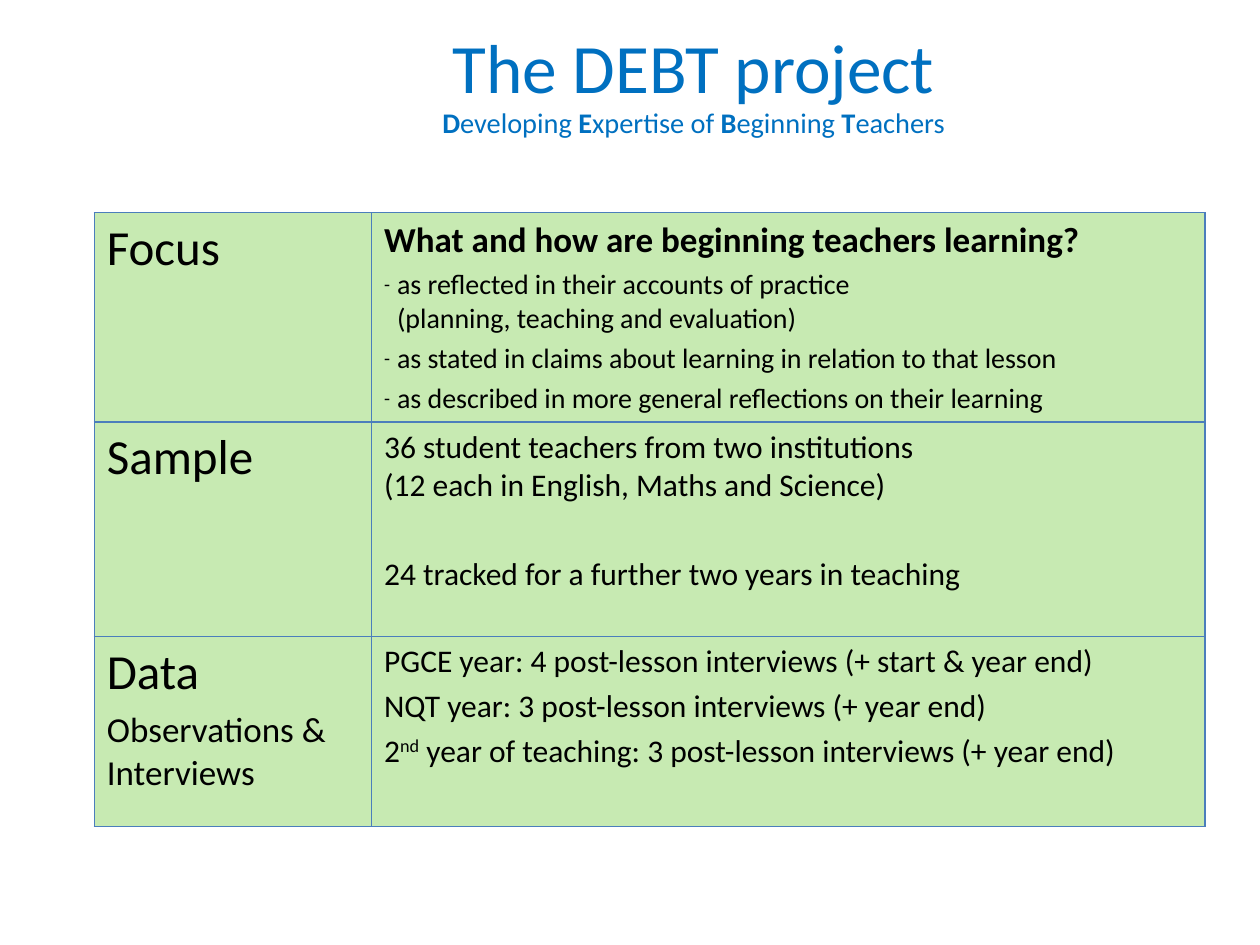
from dataclasses import dataclass

from lxml import etree
from pptx import Presentation, util as u
from pptx.dml.color import RGBColor
from pptx.enum import text
from pptx.oxml import ns

FONT = "Calibri"
BLUE = "0070C0"
BLACK = "000000"
GREEN = "C7EAB2"
BORDER = "4B7EBC"


@dataclass
class Line:
    content: str
    size: float
    bold: bool = False
    bullet: bool = False
    before: float = 0.2


def rgb(value: str) -> RGBColor:
    return RGBColor.from_string(value)


def add_node(parent, tag: str, **attrs):
    return etree.SubElement(parent, ns.qn(tag), attrs)


def set_font(font, size: float, color: str, bold: bool = False) -> None:
    font.name = FONT
    font.size = u.Pt(size)
    font.bold = bold
    font.color.rgb = rgb(color)


def add_dash(p) -> None:
    pPr = p._p.get_or_add_pPr()
    indent = u.Cm(0.26)
    pPr.set("marL", str(indent))
    pPr.set("indent", str(-indent))
    nodes = [etree.Element(ns.qn(tag), {key: value}) for tag, key, value in (
        ("a:buSzPct", "val", "70000"),
        ("a:buFont", "typeface", FONT),
        ("a:buChar", "char", "-"))]
    position = pPr.index(pPr.find(ns.qn("a:defRPr")))
    pPr[position:position] = nodes


def write_line(p, line: Line) -> None:
    p.space_before = u.Pt(round(line.before * line.size, 1))
    set_font(p.font, line.size, BLACK, line.bold)
    for i, row in enumerate(line.content.split("\n")):
        if i:
            p.add_line_break()
        for j, part in enumerate(row.split("^")):
            r = p.add_run()
            r.text = part
            if j % 2:
                r.font._element.set("baseline", "30000")
    if line.bullet:
        add_dash(p)


def draw_borders(cell) -> None:
    tcPr = cell._tc.get_or_add_tcPr()
    for i, side in enumerate(("a:lnL", "a:lnR", "a:lnT", "a:lnB")):
        ln = etree.Element(ns.qn(side), {"w": str(u.Pt(0.75))})
        add_node(add_node(ln, "a:solidFill"), "a:srgbClr", val=BORDER)
        tcPr.insert(i, ln)


def fill_cell(cell, lines: list[Line]) -> None:
    cell.fill.solid()
    cell.fill.fore_color.rgb = rgb(GREEN)
    draw_borders(cell)
    tf = cell.text_frame
    for i, line in enumerate(lines):
        write_line(tf.add_paragraph() if i else tf.paragraphs[0], line)


def draw_title(title) -> None:
    title.left, title.top = u.Cm(4.24), u.Cm(0.53)
    title.width, title.height = u.Cm(19.48), u.Cm(2.44)
    tf = title.text_frame
    tf.auto_size = text.MSO_AUTO_SIZE.NONE
    tf.vertical_anchor = text.MSO_ANCHOR.MIDDLE
    p = tf.paragraphs[0]
    p.alignment = text.PP_ALIGN.CENTER
    p.line_spacing = 0.9
    r = p.add_run()
    r.text = "The DEBT project"
    set_font(r.font, 39.6, BLUE)
    p.add_line_break()
    for word in ("Developing ", "Expertise of ", "Beginning ", "Teachers"):
        for part, bold in ((word[0], True), (word[1:], False)):
            r = p.add_run()
            r.text = part
            set_font(r.font, 16.2, BLUE, bold)


def draw_table(s, rows: list[tuple[list[Line], list[Line]]]) -> None:
    frame = s.shapes.add_table(len(rows), 2, u.Cm(1.9), u.Cm(4.29),
                               u.Cm(22.39), u.Cm(12.36))
    table = frame.table
    table.first_row = table.horz_banding = False
    for column, width in zip(table.columns, (5.59, 16.8)):
        column.width = u.Cm(width)
    for row, height, contents in zip(table.rows, (4.2, 4.32, 3.84), rows):
        row.height = u.Cm(height)
        for cell, lines in zip(row.cells, contents):
            fill_cell(cell, lines)


ROWS = [
    ([Line("Focus", 28)],
     [Line("What and how are beginning teachers learning?", 20, bold=True),
      Line("as reflected in their accounts of practice\n"
           "(planning, teaching and evaluation)", 16, bullet=True),
      Line("as stated in claims about learning in relation to that lesson",
           16, bullet=True),
      Line("as described in more general reflections on their learning",
           16, bullet=True)]),
    ([Line("Sample", 28)],
     [Line("36 student teachers from two institutions\n"
           "(12 each in English, Maths and Science)", 18),
      Line("24 tracked for a further two years in teaching", 18, before=1.6)]),
    ([Line("Data", 28), Line("Observations & Interviews", 20)],
     [Line("PGCE year: 4 post-lesson interviews (+ start & year end)", 18),
      Line("NQT year: 3 post-lesson interviews (+ year end)", 18),
      Line("2^nd^ year of teaching: 3 post-lesson interviews (+ year end)",
           18)]),
]


def main() -> None:
    prs = Presentation()
    prs.slide_width, prs.slide_height = u.Cm(25.4), u.Cm(19.05)
    s = prs.slides.add_slide(prs.slide_layouts[5])
    draw_title(s.shapes.title)
    draw_table(s, ROWS)
    prs.save("out.pptx")


if __name__ == "__main__":
    main()
